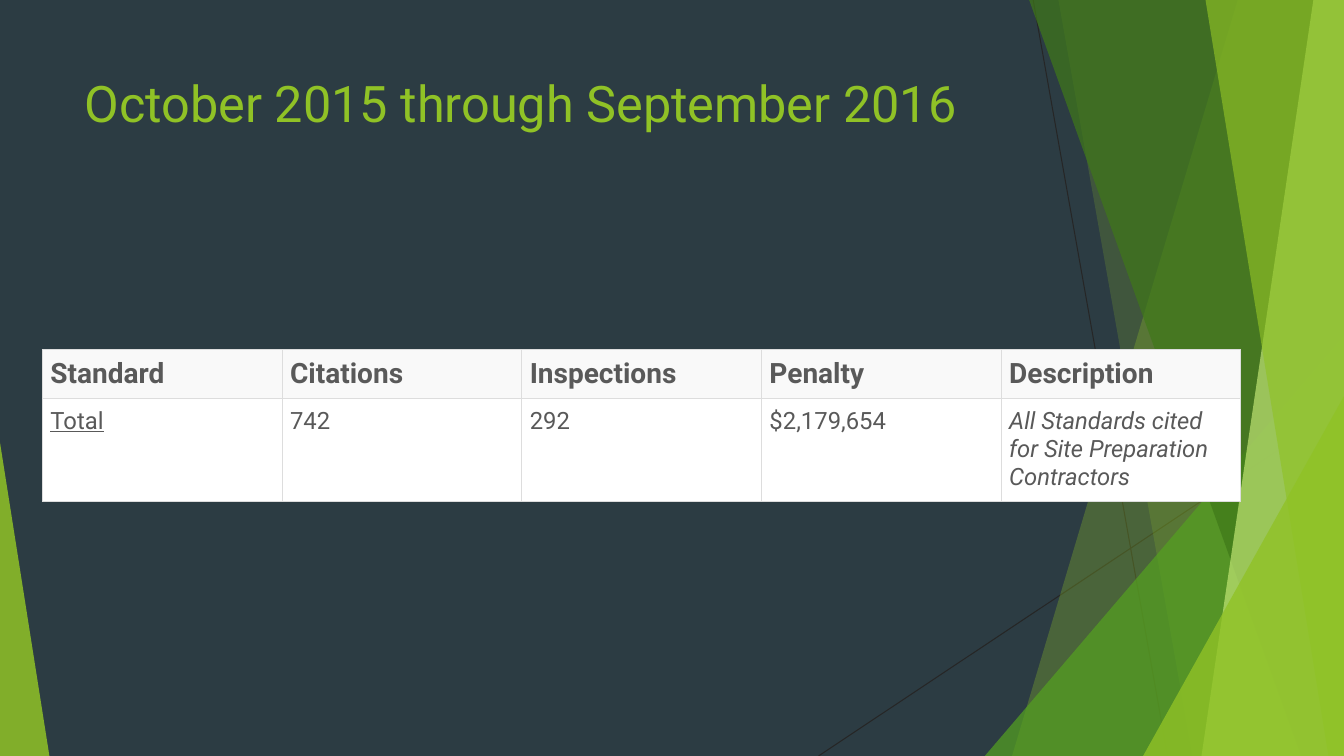
"""Build the slide with the citation totals for October 2015 to September 2016."""
from lxml.etree import SubElement
from pptx import Presentation
from pptx.dml.color import RGBColor
from pptx.enum.shapes import MSO_CONNECTOR, MSO_SHAPE
from pptx.enum.text import MSO_ANCHOR, MSO_AUTO_SIZE, PP_ALIGN
from pptx.oxml.ns import qn
from pptx.util import Pt

NIGHT = RGBColor(0x2C, 0x3C, 0x43)
LIME = RGBColor(0x90, 0xC2, 0x26)
LEAF = RGBColor(0x54, 0xA0, 0x21)
FOREST = RGBColor(0x3F, 0x78, 0x19)
PALE = RGBColor(0xC0, 0xE4, 0x74)
INK = RGBColor(0x26, 0x26, 0x26)
GREY = RGBColor(0x59, 0x59, 0x59)
RULE = RGBColor(0xDD, 0xDD, 0xDD)
HEADER = RGBColor(0xF9, 0xF9, 0xF9)
WHITE = RGBColor(0xFF, 0xFF, 0xFF)

WIDTH, HEIGHT = 960, 540
FONT = "Roboto"
TITLE = "October 2015 through September 2016"
TITLE_BOX = (53.28, 48.24, 676.8, 103.68)
ROWS = [
    ("Standard", "Citations", "Inspections", "Penalty", "Description"),
    ("Total", "742", "292", "$2,179,654",
     "All Standards cited for Site Preparation Contractors"),
]
ROW_HEIGHTS = (35, 73)
TABLE_BOX = (30.24, 249.84, 856.08, sum(ROW_HEIGHTS))
CELL_MARGIN = 5.76

HAIRLINES = [(738, 0, 834, 540), (960, 290.16, 584.64, 540)]
# Bands hold the top and bottom x of their slanted edge; triangles hold left, top, width, height, apex.
FACETS = [
    ("band", (884.16, 722.88), LIME, 30),
    ("band", (756, 851.76), LIME, 20),
    ("triangle", (703.44, 239.76, 256.56, 300.24, 1), LEAF, 72),
    ("band", (735.12, 929.52), FOREST, 70),
    ("band", (938.16, 858.24), PALE, 70),
    ("band", (861.12, 948.96), LIME, 65),
    ("triangle", (816.48, 282.96, 143.52, 257.04, 1), LIME, 80),
    ("triangle", (0, 316.08, 35.28, 223.92, 0), LIME, 85),
]


def write(frame, text, size, color, bold=False, italic=False, underline=False):
    para = frame.paragraphs[0]
    para.alignment = PP_ALIGN.LEFT
    span = para.add_run()
    span.text = text
    font = span.font
    font.name, font.size, font.color.rgb = FONT, Pt(size), color
    font.bold, font.italic, font.underline = bold, italic, underline


def add_hairline(page, ends):
    line = page.shapes.add_connector(MSO_CONNECTOR.STRAIGHT, *map(Pt, ends))
    line.line.color.rgb = INK
    line.line.width = Pt(0.75)
    SubElement(line._element.spPr, qn("a:effectLst"))


def add_facet(page, kind, geometry, color, opacity):
    if kind == "band":
        top, bottom = geometry
        builder = page.shapes.build_freeform(Pt(top), 0)
        corners = [(WIDTH, 0), (WIDTH, HEIGHT), (bottom, HEIGHT)]
        builder.add_line_segments([(Pt(x), Pt(y)) for x, y in corners])
        shape = builder.convert_to_shape()
    else:
        *box, apex = geometry
        shape = page.shapes.add_shape(MSO_SHAPE.ISOSCELES_TRIANGLE, *map(Pt, box))
        shape.adjustments[0] = apex
    shape.shadow.inherit = False
    shape.line.fill.background()
    shape.fill.solid()
    shape.fill.fore_color.rgb = color
    tint = shape._element.spPr.find(".//" + qn("a:srgbClr"))
    SubElement(tint, qn("a:alpha"), val=str(opacity * 1000))


def add_borders(cell):
    props = cell._tc.get_or_add_tcPr()
    for side in ("lnL", "lnR", "lnT", "lnB"):
        border = SubElement(props, qn(f"a:{side}"), w=str(Pt(0.75)))
        fill = SubElement(border, qn("a:solidFill"))
        SubElement(fill, qn("a:srgbClr"), val=str(RULE))


def add_citation_table(page):
    table = page.shapes.add_table(len(ROWS), len(ROWS[0]), *map(Pt, TABLE_BOX)).table
    for column in table.columns:
        column.width = Pt(TABLE_BOX[2] / len(ROWS[0]))
    for r, texts in enumerate(ROWS):
        table.rows[r].height = Pt(ROW_HEIGHTS[r])
        head = r == 0
        for c, text in enumerate(texts):
            cell = table.cell(r, c)
            cell.margin_left = cell.margin_right = Pt(CELL_MARGIN)
            cell.margin_top = cell.margin_bottom = Pt(CELL_MARGIN)
            add_borders(cell)
            cell.fill.solid()
            cell.fill.fore_color.rgb = HEADER if head else WHITE
            write(cell.text_frame, text, size=20 if head else 17, color=GREY, bold=head,
                  italic=not head and c == len(texts) - 1, underline=not head and c == 0)


def main():
    deck = Presentation()
    deck.slide_width, deck.slide_height = Pt(WIDTH), Pt(HEIGHT)
    page = deck.slides.add_slide(deck.slide_layouts[5])
    page.background.fill.solid()
    page.background.fill.fore_color.rgb = NIGHT
    for ends in HAIRLINES:
        add_hairline(page, ends)
    for facet in FACETS:
        add_facet(page, *facet)

    title = page.shapes.title
    title.left, title.top, title.width, title.height = map(Pt, TITLE_BOX)
    frame = title.text_frame
    frame.word_wrap = True
    frame.auto_size = MSO_AUTO_SIZE.NONE
    frame.vertical_anchor = MSO_ANCHOR.TOP
    write(frame, TITLE, size=36, color=LIME)

    add_citation_table(page)
    deck.save("out.pptx")


if __name__ == "__main__":
    main()
